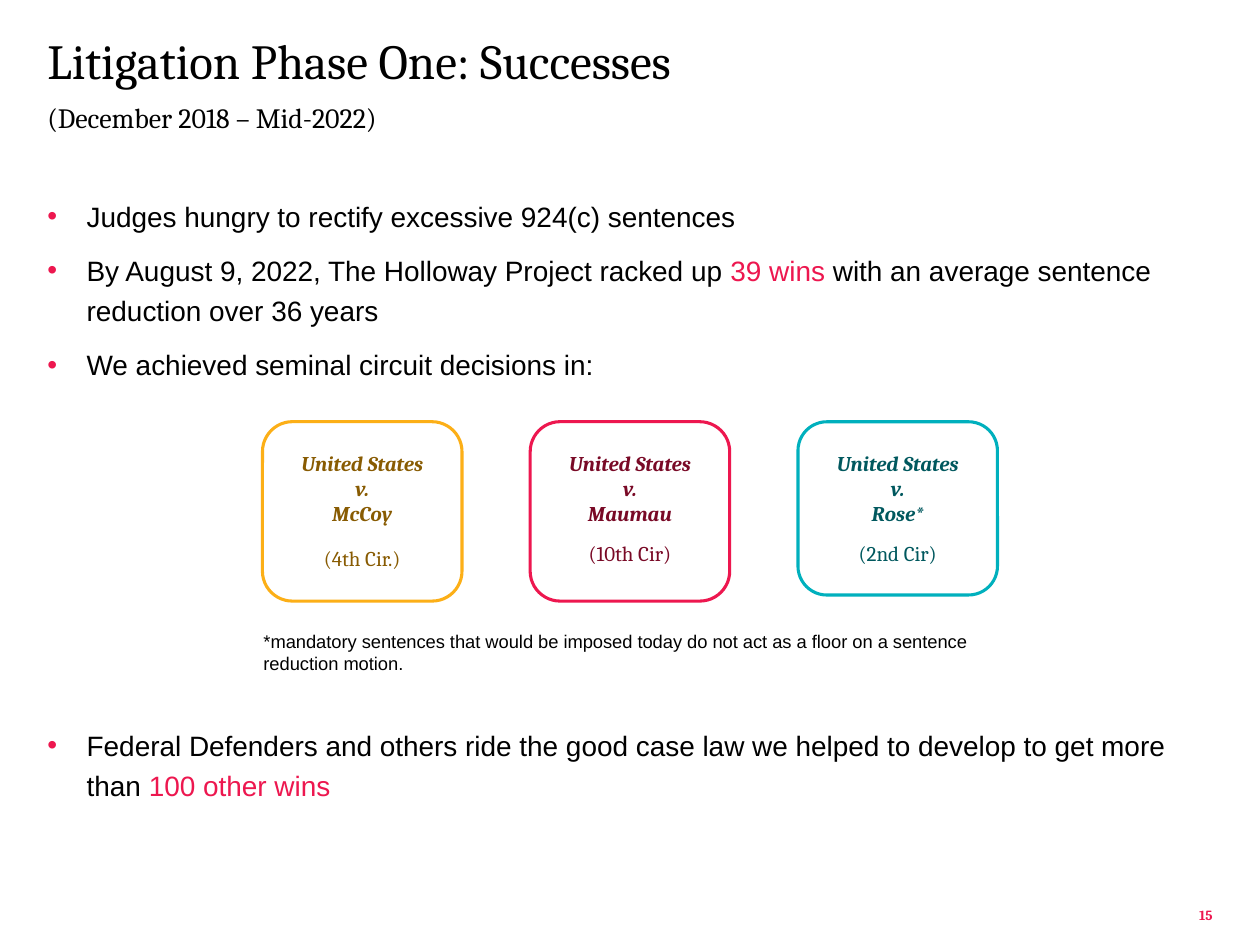
import pptx
import pptx.dml.color
import pptx.enum.shapes
import pptx.enum.text
import pptx.oxml
import pptx.oxml.ns
import pptx.util

Pt = pptx.util.Pt
ALIGN = pptx.enum.text.PP_ALIGN
ANCHOR = pptx.enum.text.MSO_ANCHOR
BLACK, RED = "000000", "ED174F"


def color(value):
    return pptx.dml.color.RGBColor.from_string(value)


def add_box(slide, box, anchor=ANCHOR.TOP, inset=(0, 0, 0, 0)):
    tf = slide.shapes.add_textbox(*map(Pt, box)).text_frame
    left, top, right, bottom = map(Pt, inset)
    fmt = {"word_wrap": True, "vertical_anchor": anchor,
           "margin_left": left, "margin_top": top,
           "margin_right": right, "margin_bottom": bottom}
    for name, value in fmt.items():
        setattr(tf, name, value)
    return tf


def add_paragraph(tf, first, **fmt):
    p = tf.paragraphs[0] if first else tf.add_paragraph()
    for name, value in fmt.items():
        setattr(p, name, value)
    return p


def add_run(p, text, fill=BLACK, **fmt):
    r = p.add_run()
    r.text = text
    for name, value in fmt.items():
        setattr(r.font, name, value)
    r.font.color.rgb = color(fill)


def add_line(slide, box, text, fill=BLACK, spacing=1.0, align=ALIGN.LEFT,
             anchor=ANCHOR.TOP, inset=(0, 0, 0, 0), **font):
    tf = add_box(slide, box, anchor, inset)
    p = add_paragraph(tf, True, line_spacing=spacing, alignment=align)
    add_run(p, text, fill, **font)


def add_bullet(p, indent):
    pPr = p._p.get_or_add_pPr()
    pPr.set("marL", str(Pt(indent)))
    pPr.set("indent", str(-Pt(indent)))
    ns = pptx.oxml.ns.nsdecls("a")
    for xml in (f'<a:buClr {ns}><a:srgbClr val="{RED}"/></a:buClr>',
                f'<a:buFont {ns} typeface="Arial"/>',
                f'<a:buChar {ns} char="•"/>'):
        pPr.append(pptx.oxml.parse_xml(xml))


def add_bullets(slide, box, items):
    """Each item is a list of (text, colour) runs."""
    tf = add_box(slide, box)
    for i, runs in enumerate(items):
        p = add_paragraph(tf, i == 0, line_spacing=1.2, space_after=Pt(8))
        add_bullet(p, 22.5)
        for text, fill in runs:
            add_run(p, text, fill, name="Arial", size=Pt(16))


def add_card(slide, box, party, circuit, line, fill, pad, spacing):
    x, y, w, h = box
    # Rounded outline
    sp = slide.shapes.add_shape(
        pptx.enum.shapes.MSO_SHAPE.ROUNDED_RECTANGLE, *map(Pt, box))
    sp.shadow.inherit = False
    sp.fill.background()
    sp.line.color.rgb = color(line)
    sp.line.width = Pt(1.75)
    # Case name and circuit
    tf = add_box(slide, (x + pad, y + 16.5, w - 2 * pad, h - 33))
    font = {"name": "Cambria", "size": Pt(12)}
    p = add_paragraph(tf, True, alignment=ALIGN.CENTER, space_after=Pt(8))
    for i, text in enumerate(("United States", "v.", party)):
        if i:
            p.add_line_break()
        add_run(p, text, fill, bold=True, italic=True, **font)
    p = add_paragraph(tf, False, alignment=ALIGN.CENTER, line_spacing=spacing)
    add_run(p, circuit, fill, **font)


def add_cards(slide, box, pitch, cards):
    x, y, w, h = box
    for i, (cut, *card) in enumerate(cards):
        add_card(slide, (x + i * pitch, y, w, h - cut), *card)


def add_header(slide, box, title, subtitle):
    x, y, w, h = box
    add_line(slide, (x, y, w, 30), title, spacing=0.9,
             name="Cambria", size=Pt(28))
    add_line(slide, (x, y + h - 21, w, 21), subtitle, spacing=1.2,
             name="Cambria", size=Pt(16))


def main():
    prs = pptx.Presentation()
    prs.slide_width, prs.slide_height = Pt(720), Pt(540)
    slide = prs.slides.add_slide(prs.slide_layouts[6])

    add_header(slide, (27, 21, 666, 53.5), "Litigation Phase One: Successes",
               "(December 2018 – Mid-2022)")

    # Bullets above and below the cards
    add_bullets(slide, (27, 110, 666, 114), [
        [("Judges hungry to rectify excessive 924(c) sentences", BLACK)],
        [("By August 9, 2022, The Holloway Project racked up ", BLACK),
         ("39 wins ", RED),
         ("with an average sentence reduction over 36 years", BLACK)],
        [("We achieved seminal circuit decisions in:", BLACK)],
    ])
    add_bullets(slide, (27, 412.5, 666, 47), [
        [("Federal Defenders and others ride the good case law we helped "
          "to develop to get more than ", BLACK),
         ("100 other wins", RED)],
    ])

    # Height cut, party, circuit, line, text colour, side padding, spacing
    add_cards(slide, (150, 241, 114, 102.5), 153, [
        (0, "McCoy", "(4th Cir.)", "FCAF17", "885B02", 6, 1.2),
        (0, "Maumau", "(10th Cir)", RED, "790926", 3.5, 1.0),
        (3.5, "Rose*", "(2nd Cir)", "00B0BD", "00585E", 0, 1.0),
    ])

    # Footnote
    add_line(slide, (143.5, 356.5, 435, 34),
             "*mandatory sentences that would be imposed today do not act "
             "as a floor on a sentence reduction motion.",
             inset=(7.2, 3.6, 7.2, 3.6), name="Arial", size=Pt(10.5))

    # Page number
    add_line(slide, (673, 512.5, 20, 15), "15", RED, 0.9, ALIGN.RIGHT,
             ANCHOR.BOTTOM, name="Cambria", size=Pt(8), bold=True)

    prs.save("out.pptx")


if __name__ == "__main__":
    main()
